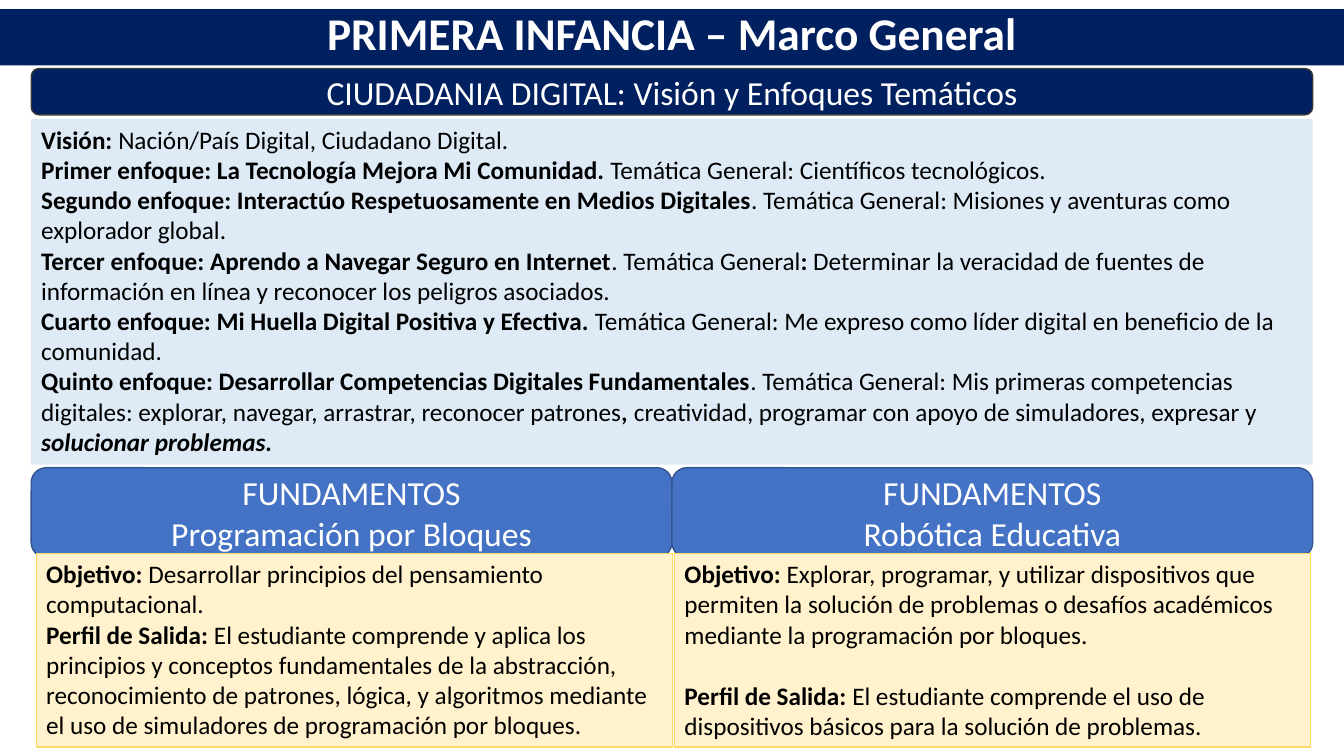
"""Builds the early childhood framework slide."""
from pptx import Presentation
from pptx.dml.color import RGBColor
from pptx.enum.shapes import MSO_SHAPE
from pptx.enum.text import MSO_ANCHOR, PP_ALIGN
from pptx.util import Inches, Pt

RECTANGLE, ROUNDED = MSO_SHAPE.RECTANGLE, MSO_SHAPE.ROUNDED_RECTANGLE
TOP, MIDDLE = MSO_ANCHOR.TOP, MSO_ANCHOR.MIDDLE
LEFT, CENTER = PP_ALIGN.LEFT, PP_ALIGN.CENTER

NAVY, BLUE, PALE_BLUE, CREAM = "002060", "4472C4", "DEEBF7", "FFF2CC"
GREY_EDGE, BLUE_EDGE, GOLD_EDGE = "3B3838", "325491", "FFD966"
WHITE, BLACK = "FFFFFF", "000000"
PLAIN, BOLD, BOLD_ITALIC = "", "b", "bi"

TITLE = "PRIMERA INFANCIA – Marco General"
SUBTITLE = "CIUDADANIA DIGITAL: Visión y Enfoques Temáticos"
APPROACHES = [
    [("Visión: ", BOLD), ("Nación/País Digital, Ciudadano Digital.", PLAIN)],
    [("Primer enfoque: La Tecnología Mejora Mi Comunidad. ", BOLD),
     ("Temática General: Científicos tecnológicos.", PLAIN)],
    [("Segundo enfoque: Interactúo Respetuosamente en Medios Digitales", BOLD),
     (". Temática General: Misiones y aventuras como explorador global.", PLAIN)],
    [("Tercer enfoque: Aprendo a Navegar Seguro en Internet", BOLD),
     (". Temática General", PLAIN), (": ", BOLD),
     ("Determinar la veracidad de fuentes de información en línea y reconocer "
      "los peligros asociados.", PLAIN)],
    [("Cuarto enfoque: Mi Huella Digital Positiva y Efectiva. ", BOLD),
     ("Temática General: Me expreso como líder digital en beneficio de la "
      "comunidad.", PLAIN)],
    [("Quinto enfoque: Desarrollar Competencias Digitales Fundamentales", BOLD),
     (". Temática General: Mis primeras competencias digitales: explorar, "
      "navegar, arrastrar, reconocer patrones", PLAIN), (",", BOLD_ITALIC),
     (" creatividad, programar con apoyo de simuladores, expresar y", PLAIN),
     (" solucionar problemas.", BOLD_ITALIC)],
]
FOUNDATIONS = [
    {"name": "Programación por Bloques",
     "goal": "Desarrollar principios del pensamiento computacional.",
     "profile": "El estudiante comprende y aplica los principios y conceptos "
                "fundamentales de la abstracción, reconocimiento de patrones, "
                "lógica, y algoritmos mediante el uso de simuladores de "
                "programación por bloques.",
     "gap": 0},
    {"name": "Robótica Educativa",
     "goal": "Explorar, programar, y utilizar dispositivos que permiten la "
             "solución de problemas o desafíos académicos mediante la "
             "programación por bloques.",
     "profile": "El estudiante comprende el uso de dispositivos básicos para "
                "la solución de problemas.",
     "gap": 22},
]

WIDTH, HEIGHT = 13.33, 7.5
MARGIN = 0.31
CONTENT = WIDTH - 2 * MARGIN
COLUMN = CONTENT / len(FOUNDATIONS)
CARD = 6.31
CARD_LEFT, CARD_STEP = 0.36, 6.33


def color(value):
    """Return a colour from its hex string."""
    return RGBColor.from_string(value)


def add_panel(page, kind, frame, fill, edge=None):
    """Add a flat filled shape with an optional edge."""
    panel = page.shapes.add_shape(kind, *(Inches(length) for length in frame))
    panel.shadow.inherit = False
    panel.fill.solid()
    panel.fill.fore_color.rgb = color(fill)
    if edge:
        panel.line.color.rgb = color(edge)
        panel.line.width = Pt(1)
    else:
        panel.line.fill.background()
    return panel


def write(panel, paragraphs, size, ink, align=LEFT, anchor=TOP):
    """Write paragraphs of styled spans and return the paragraphs."""
    frame = panel.text_frame
    frame.word_wrap = True
    frame.vertical_anchor = anchor
    for index, spans in enumerate(paragraphs):
        para = frame.add_paragraph() if index else frame.paragraphs[0]
        para.alignment = align
        for text, style in spans:
            span = para.add_run()
            span.text = text
            span.font.name = "Calibri"
            span.font.size = Pt(size)
            span.font.color.rgb = color(ink)
            span.font.bold = "b" in style
            span.font.italic = "i" in style
    return frame.paragraphs


def main():
    """Build and save the deck."""
    deck = Presentation()
    deck.slide_width, deck.slide_height = Inches(WIDTH), Inches(HEIGHT)
    page = deck.slides.add_slide(deck.slide_layouts[6])

    banner = add_panel(page, RECTANGLE, (0, 0.09, WIDTH, 0.56), NAVY)
    title = write(banner, [[(TITLE, BOLD)]], 32.4, WHITE, CENTER, MIDDLE)
    title[0].line_spacing = 0.8

    subtitle = add_panel(page, ROUNDED, (MARGIN, 0.68, CONTENT, 0.46), NAVY, GREY_EDGE)
    write(subtitle, [[(SUBTITLE, PLAIN)]], 24, WHITE, CENTER, MIDDLE)

    approaches = add_panel(page, RECTANGLE, (MARGIN, 1.18, CONTENT, 3.43), PALE_BLUE)
    write(approaches, APPROACHES, 18, BLACK)

    for index, foundation in enumerate(FOUNDATIONS):
        heading = add_panel(page, ROUNDED, (MARGIN + index * COLUMN, 4.64, COLUMN, 0.89),
                            BLUE, BLUE_EDGE)
        write(heading, [[("FUNDAMENTOS", PLAIN)], [(foundation["name"], PLAIN)]],
              24, WHITE, CENTER, MIDDLE)

    for index, foundation in enumerate(FOUNDATIONS):
        card = add_panel(page, RECTANGLE, (CARD_LEFT + index * CARD_STEP, 5.49, CARD, 1.92),
                         CREAM, GOLD_EDGE)
        details = write(card, [
            [("Objetivo: ", BOLD), (foundation["goal"], PLAIN)],
            [("Perfil de Salida: ", BOLD), (foundation["profile"], PLAIN)],
        ], 18, BLACK)
        details[1].space_before = Pt(foundation["gap"])

    deck.save("out.pptx")


if __name__ == "__main__":
    main()
